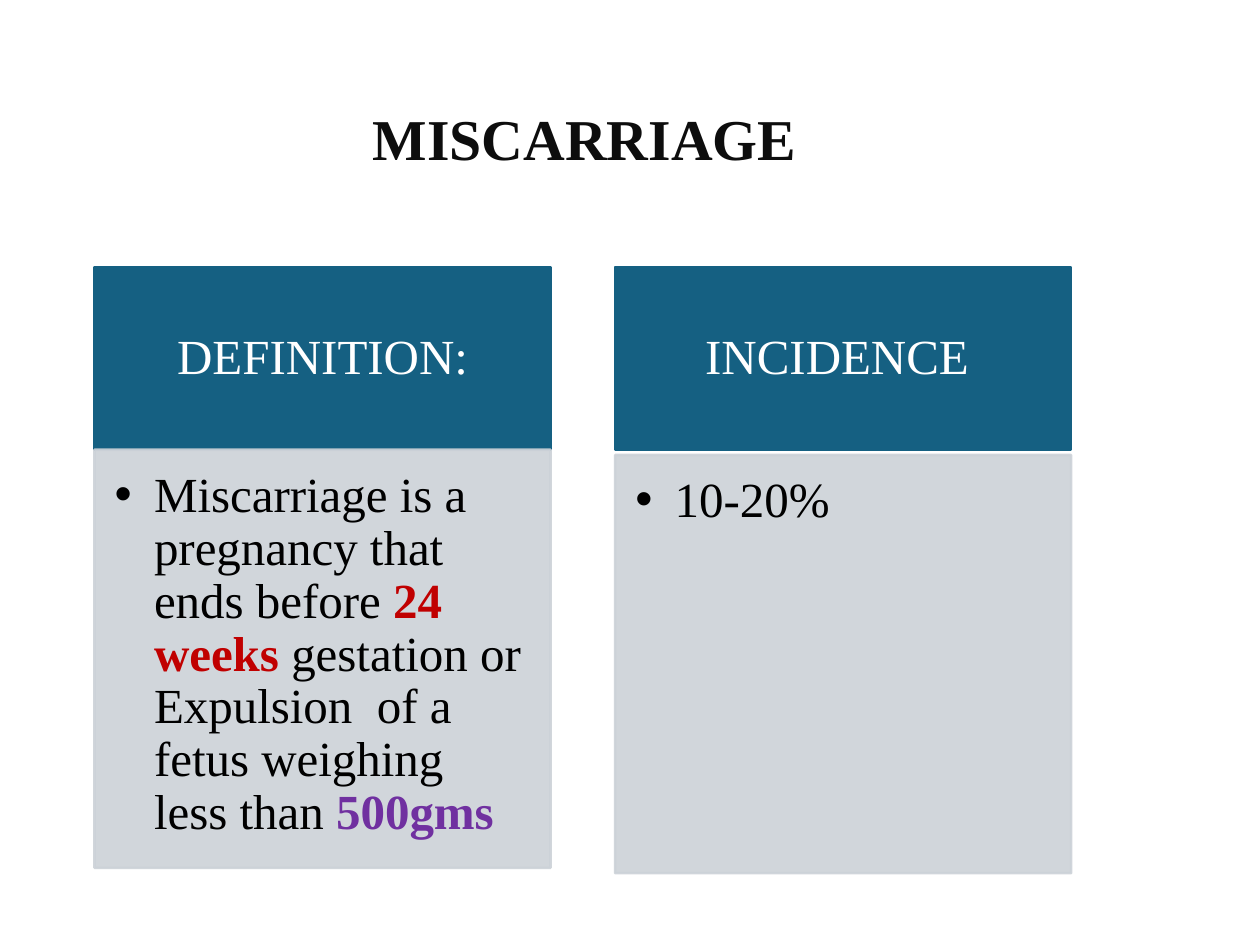
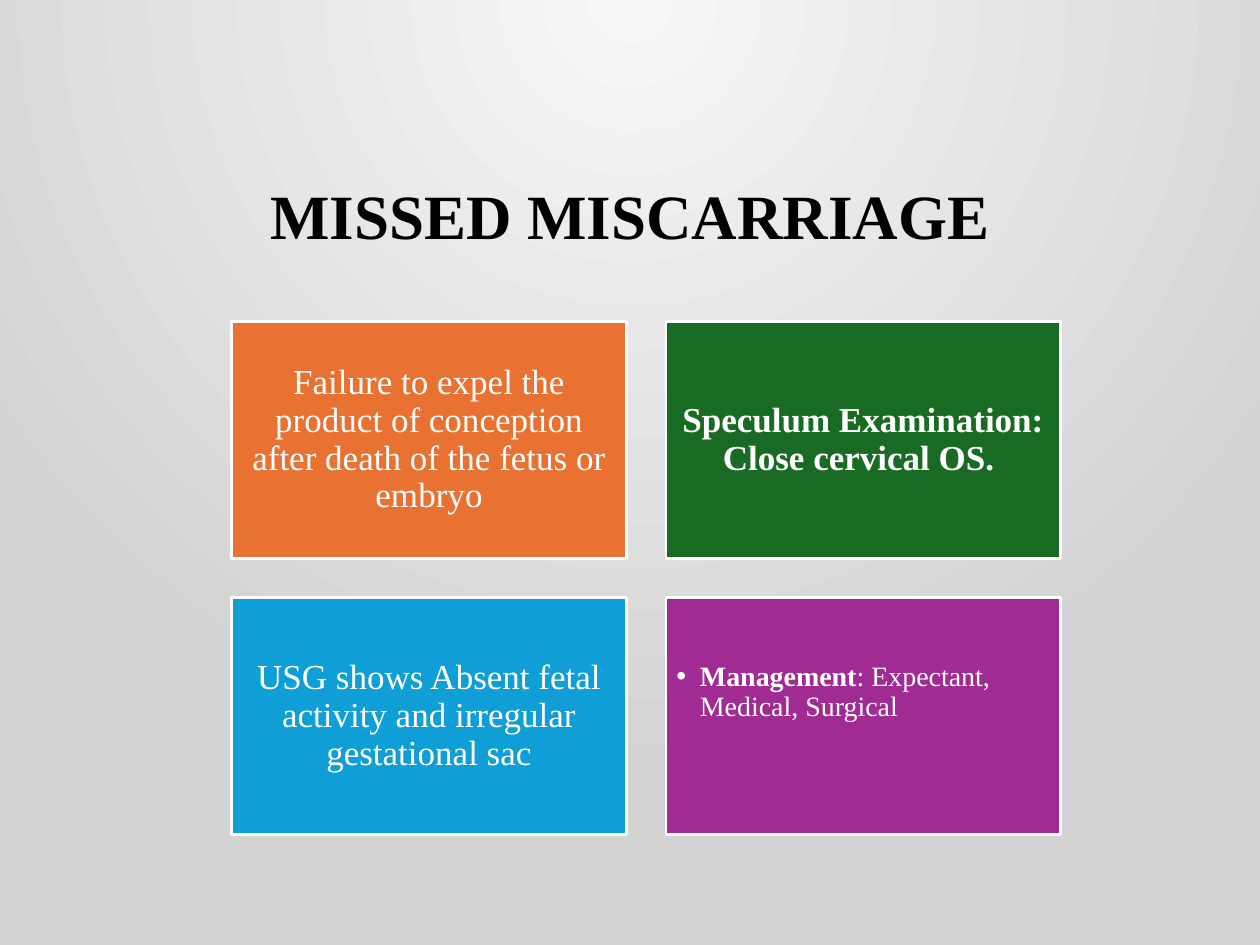
from lxml import etree
from pptx import Presentation
from pptx.dml.color import RGBColor
from pptx.enum.shapes import MSO_SHAPE
from pptx.enum.text import MSO_ANCHOR, MSO_AUTO_SIZE, PP_ALIGN
from pptx.oxml.ns import qn
from pptx.util import Pt

RECTANGLE = MSO_SHAPE.RECTANGLE
TOP, MIDDLE = MSO_ANCHOR.TOP, MSO_ANCHOR.MIDDLE
LEFT, CENTER = PP_ALIGN.LEFT, PP_ALIGN.CENTER

FONT = "Times New Roman"
WHITE = RGBColor(0xFF, 0xFF, 0xFF)
BLACK = RGBColor(0x00, 0x00, 0x00)
NEAR_BLACK = RGBColor(0x0D, 0x0D, 0x0D)
TEAL = RGBColor(0x15, 0x60, 0x82)
PALE_GREY = RGBColor(0xCC, 0xD2, 0xD8)
RED = RGBColor(0xC0, 0x00, 0x00)
PURPLE = RGBColor(0x70, 0x30, 0xA0)
ORANGE = RGBColor(0xE9, 0x71, 0x32)
GREEN = RGBColor(0x19, 0x6B, 0x24)
BLUE = RGBColor(0x0F, 0x9E, 0xD5)
MAGENTA = RGBColor(0xA0, 0x2B, 0x93)
GLOW_INNER = RGBColor(0xF7, 0xF7, 0xF7)
GLOW_OUTER = RGBColor(0xD3, 0xD3, 0xD3)

# A run is (text, bold, colour).
PANELS = [  # heading, body top, body runs
    ("DEFINITION:", 257, [
        ("Miscarriage is a pregnancy that ends before ", False, BLACK),
        ("24 weeks ", True, RED),
        ("gestation or Expulsion  of a fetus weighing less than ", False, BLACK),
        ("500gms", True, PURPLE)]),
    ("INCIDENCE ", 260, [("10-20%", False, BLACK)]),
]
FACTS = [  # fill, runs
    (ORANGE, [("Failure to expel the product of conception after death "
               "of the fetus or embryo", False, WHITE)]),
    (GREEN, [("Speculum Examination: Close cervical OS. ", True, WHITE)]),
    (BLUE, [("USG shows Absent fetal activity and irregular gestational sac",
             False, WHITE)]),
    (MAGENTA, [("Management", True, WHITE),
               (": Expectant, Medical, Surgical", False, WHITE)]),
]

PANEL_LEFT, PANEL_TOP, PANEL_PITCH, PANEL_WIDTH = 54, 152.6, 297.5, 260.6
HEADING_HEIGHT, BODY_HEIGHT = 104.4, 239
HEADING_INSETS = (16, 9, 16, 9)
BODY_INSETS = (11.5, 11.5, 16, 17)
FACT_LEFT, FACT_TOP, FACT_WIDTH, FACT_HEIGHT, FACT_GAP = 132.5, 183.6, 225.4, 135.4, 22.6
FACT_INSETS = (6, 6, 6, 6)
MANAGEMENT_INSETS = (6, 37, 6, 6)


def set_insets(frame, insets):
    frame.margin_left, frame.margin_top, frame.margin_right, frame.margin_bottom = map(Pt, insets)


def add_title(slide, text, box, size, color, anchor, insets, indent=0):
    title = slide.shapes.title
    title.left, title.top, title.width, title.height = map(Pt, box)
    frame = title.text_frame
    frame.text = text
    frame.auto_size = MSO_AUTO_SIZE.NONE
    frame.vertical_anchor = anchor
    set_insets(frame, insets)
    paragraph = frame.paragraphs[0]
    paragraph.alignment = CENTER
    paragraph.line_spacing = 0.9
    paragraph._p.get_or_add_pPr().set("marL", str(Pt(indent)))
    font = paragraph.font
    font.name, font.size, font.bold, font.color.rgb = FONT, Pt(size), True, color


def add_bullet(paragraph, indent):
    properties = paragraph._p.get_or_add_pPr()
    properties.set("marL", str(Pt(indent)))
    properties.set("indent", str(-Pt(indent)))
    etree.SubElement(properties, qn("a:buFont"), typeface="Arial")
    etree.SubElement(properties, qn("a:buChar"), char="•")


def add_card(slide, box, fill, line, runs, size, insets, bullet_indent=None):
    """Add a rectangle with centred text, or with one bullet from the top."""
    card = slide.shapes.add_shape(RECTANGLE, *map(Pt, box))
    card.shadow.inherit = False
    card.fill.solid()
    card.fill.fore_color.rgb = fill
    card.line.color.rgb = line
    card.line.width = Pt(1.5)
    frame = card.text_frame
    frame.word_wrap = True
    frame.vertical_anchor = TOP if bullet_indent else MIDDLE
    set_insets(frame, insets)
    paragraph = frame.paragraphs[0]
    paragraph.alignment = LEFT if bullet_indent else CENTER
    paragraph.line_spacing = 0.9
    if bullet_indent:
        add_bullet(paragraph, bullet_indent)
    paragraph.font.name, paragraph.font.size = FONT, Pt(size)
    for text, bold, color in runs:
        run = paragraph.add_run()
        run.text = text
        run.font.bold, run.font.color.rgb = bold, color
    return card


def make_translucent(card, percent):
    for color in card._element.spPr.iter(qn("a:srgbClr")):
        etree.SubElement(color, qn("a:alpha"), val=str(percent * 1000))


def add_radial_background(slide):
    fill = slide.background.fill
    fill.gradient()
    for stop, color in zip(fill.gradient_stops, (GLOW_INNER, GLOW_OUTER)):
        stop.color.rgb = color
    gradient = slide.background._cSld.find(".//" + qn("a:gradFill"))
    linear = gradient.find(qn("a:lin"))
    radial = etree.Element(qn("a:path"), {"path": "circle"})
    etree.SubElement(radial, qn("a:fillToRect"), l="43000", t="0", r="43000", b="100000")
    gradient.replace(linear, radial)


def build_definition_slide(slide):
    add_title(slide, "MISCARRIAGE", (54, 60, 515.5, 41), 33, NEAR_BLACK, MIDDLE,
              (0, 1, 0, 0), indent=44.6)
    for column, (heading, body_top, body) in enumerate(PANELS):
        left = PANEL_LEFT + column * PANEL_PITCH
        add_card(slide, (left, PANEL_TOP, PANEL_WIDTH, HEADING_HEIGHT), TEAL, TEAL,
                 [(heading, False, WHITE)], 28, HEADING_INSETS)
        card = add_card(slide, (left, body_top, PANEL_WIDTH, BODY_HEIGHT), PALE_GREY,
                        PALE_GREY, body, 28, BODY_INSETS, bullet_indent=22.5)
        make_translucent(card, 90)


def build_missed_slide(slide):
    add_radial_background(slide)
    add_title(slide, "MISSED MISCARRIAGE", (76.3, 102.2, 567.4, 74.2), 36, BLACK, TOP,
              (7.2, 3.6, 7.2, 3.6))
    for index, (fill, runs) in enumerate(FACTS):
        row, column = divmod(index, 2)
        box = (FACT_LEFT + column * (FACT_WIDTH + FACT_GAP),
               FACT_TOP + row * (FACT_HEIGHT + FACT_GAP), FACT_WIDTH, FACT_HEIGHT)
        if fill == MAGENTA:
            add_card(slide, box, fill, WHITE, runs, 16, MANAGEMENT_INSETS, bullet_indent=13.5)
        else:
            add_card(slide, box, fill, WHITE, runs, 20, FACT_INSETS)


def main():
    presentation = Presentation()
    presentation.slide_width, presentation.slide_height = Pt(720), Pt(540)
    title_only = presentation.slide_layouts[5]
    for build in (build_definition_slide, build_missed_slide):
        build(presentation.slides.add_slide(title_only))
    presentation.save("out.pptx")


if __name__ == "__main__":
    main()
